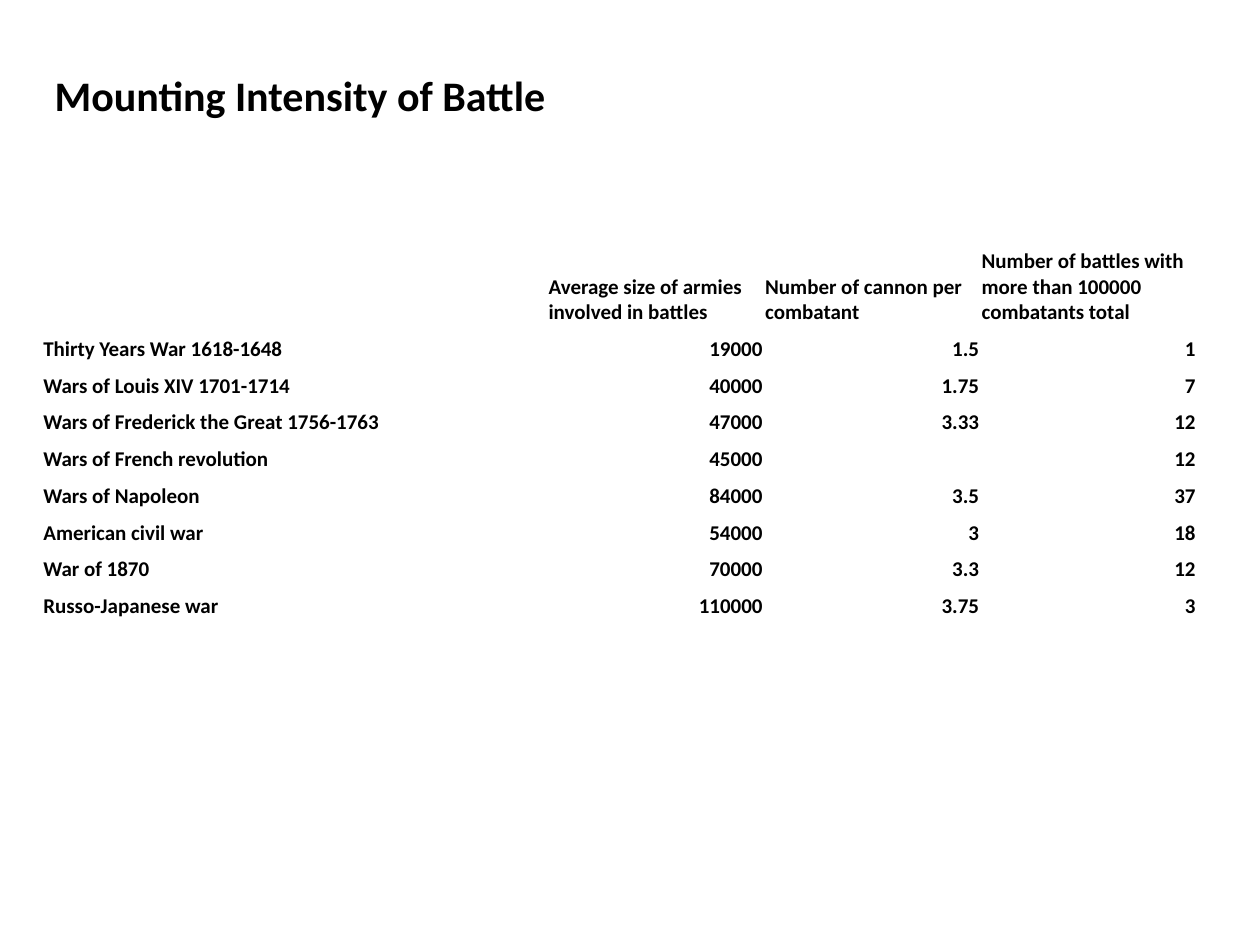
from lxml.etree import SubElement
from pptx import Presentation
from pptx.dml.color import RGBColor
from pptx.enum.text import MSO_ANCHOR as ANCHOR, MSO_AUTO_SIZE as AUTO, PP_ALIGN as ALIGN
from pptx.oxml.ns import qn
from pptx.util import Emu, Pt

EMU_PER_PX = 9525  # 96 px to the inch
TITLE_ONLY = 5

HEADER = ["", "Average size of armies involved in battles",
          "Number of cannon per combatant",
          "Number of battles with more than 100000 combatants total"]
WARS = [
    ["Thirty Years War 1618-1648", "19000", "1.5", "1"],
    ["Wars of Louis XIV 1701-1714", "40000", "1.75", "7"],
    ["Wars of Frederick the Great 1756-1763", "47000", "3.33", "12"],
    ["Wars of French revolution", "45000", "", "12"],
    ["Wars of Napoleon", "84000", "3.5", "37"],
    ["American civil war", "54000", "3", "18"],
    ["War of 1870", "70000", "3.3", "12"],
    ["Russo-Japanese war", "110000", "3.75", "3"],
]


def px(n):
    return Emu(n * EMU_PER_PX)


def color(hex_string):
    return RGBColor.from_string(hex_string)


class Deck:
    font = "Calibri"
    ink = "000000"

    def __init__(self, width, height):
        self.prs = Presentation()
        self.prs.slide_width, self.prs.slide_height = px(width), px(height)
        self.slide = None

    def add_slide(self):
        self.slide = self.prs.slides.add_slide(self.prs.slide_layouts[TITLE_ONLY])

    def style(self, p, size, align=ALIGN.LEFT):
        p.alignment = align
        p.font.name, p.font.size, p.font.bold = self.font, Pt(size), True
        p.font.color.rgb = color(self.ink)

    def title(self, text, x, y, w, h, size):
        sp = self.slide.shapes.title
        sp.left, sp.top, sp.width, sp.height = map(px, (x, y, w, h))
        tf = sp.text_frame
        tf.text = text
        tf.word_wrap = True
        tf.auto_size = AUTO.SHAPE_TO_FIT_TEXT
        tf.vertical_anchor = ANCHOR.TOP
        self.style(tf.paragraphs[0], size)
        # Bring the title in front of the table it overlaps
        self.slide.shapes.element.append(sp.element)

    def table(self, rows, x, y, col_widths, row_heights, size):
        frame = self.slide.shapes.add_table(
            len(rows), len(col_widths), px(x), px(y),
            px(sum(col_widths)), px(sum(row_heights)))
        table = frame.table
        table.first_row = table.horz_banding = False
        for col, width in zip(table.columns, col_widths):
            col.width = px(width)
        for row, height in zip(table.rows, row_heights):
            row.height = px(height)
        for i, texts in enumerate(rows):
            for j, text in enumerate(texts):
                # Figures go right, the header row and war names left
                align = ALIGN.RIGHT if i and j else ALIGN.LEFT
                self.cell(table.cell(i, j), text, size, align)

    def cell(self, cell, text, size, align):
        cell.text = text
        cell.vertical_anchor = ANCHOR.BOTTOM
        cell.margin_left = cell.margin_right = cell.margin_top = px(1)
        cell.margin_bottom = 0
        # No borders; they must precede the fill
        tc_pr = cell._tc.get_or_add_tcPr()
        for side in ("lnL", "lnR", "lnT", "lnB"):
            border = SubElement(tc_pr, qn(f"a:{side}"), w="0")
            SubElement(border, qn("a:noFill"))
        cell.fill.background()
        self.style(cell.text_frame.paragraphs[0], size, align)


def main():
    deck = Deck(960, 720)
    deck.add_slide()
    # Battle figures by war
    deck.table([HEADER] + WARS, 32, 80, [385] + [165] * 3,
               [168] + [28] * len(WARS), 12)
    # Heading
    deck.title("Mounting Intensity of Battle", 32, 48, 552, 49, 24)
    deck.prs.save("out.pptx")


if __name__ == "__main__":
    main()
